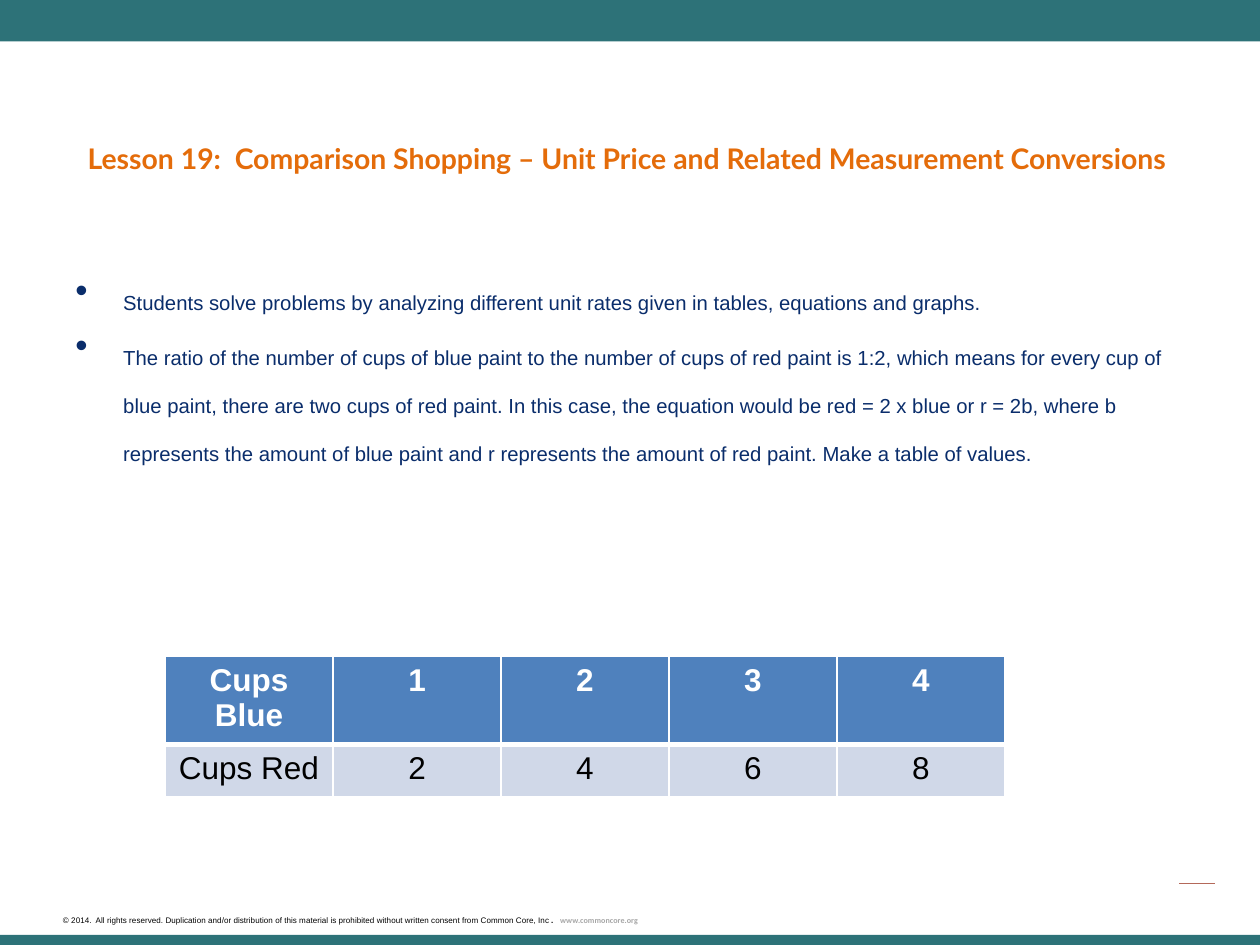
from lxml.etree import SubElement
from pptx import Presentation
from pptx.dml.color import RGBColor
from pptx.enum.shapes import MSO_CONNECTOR, MSO_SHAPE
from pptx.enum.text import MSO_ANCHOR, MSO_AUTO_SIZE, PP_ALIGN
from pptx.oxml.ns import qn
from pptx.util import Inches, Pt

# Content
TITLE = "Lesson 19:  Comparison Shopping – Unit Price and Related Measurement Conversions "
BULLETS = [
    "Students solve problems by analyzing different unit rates given in tables, "
    "equations and graphs.",
    "The ratio of the number of cups of blue paint to the number of cups of red paint "
    "is 1:2, which means for every cup of blue paint, there are two cups of red paint. "
    "In this case, the equation would be red = 2 x blue or r = 2b, where b represents "
    "the amount of blue paint and r represents the amount of red paint. "
    "Make a table of values.",
]
PAINT_TABLE = [
    ("Cups Blue", "1", "2", "3", "4"),
    ("Cups Red", "2", "4", "6", "8"),
]
FOOTER = [  # text, style name
    ("© 2014.  All rights reserved. Duplication and/or distribution of this material is "
     "prohibited without written consent from Common Core, Inc", "footer"),
    (".   ", "footer_dot"),
    ("www.commoncore.org", "footer_link"),
]

# Colours and type: each style is font, size, colour, bold
THEME = {
    "bar": "2D7278", "rule": "B4695A", "border": "FFFFFF",
    "row_fills": ("4F81BD", "D0D8E8"),
    "title": ("Lato", 28, "E46C0A", True),
    "body": ("Arial", 20, "0A2D6B", False),
    "row_0": ("Arial", 18, "FFFFFF", True),
    "row_1": ("Arial", 18, "000000", False),
    "footer": ("Arial", 8, "000000", False),
    "footer_dot": ("Arial", 8, "000000", True),
    "footer_link": ("Calibri", 8, "A6A6A6", True),
}
WIDTH, HEIGHT = 10, 7.5
MARGIN = WIDTH * 0.05
CONTENT_WIDTH = WIDTH - 2 * MARGIN
COLUMN_WIDTH, ROW_HEIGHT = WIDTH / 7.5, 0.41
INDENT = 0.38

presentation = Presentation()
presentation.slide_width, presentation.slide_height = Inches(WIDTH), Inches(HEIGHT)
slide = presentation.slides.add_slide(presentation.slide_layouts[6])


def color(name):
    return RGBColor.from_string(name)


def style_run(run, style, lowered=True):
    name, size, fill, bold = THEME[style]
    run.font.name, run.font.size, run.font.bold = name, Pt(size), bold
    run.font.color.rgb = color(fill)
    if lowered:
        run._r.get_or_add_rPr().set("baseline", "-25000")


def add_bar(top, height):
    bar = slide.shapes.add_shape(
        MSO_SHAPE.RECTANGLE, 0, Inches(top), Inches(WIDTH), Inches(height))
    bar.shadow.inherit = False
    bar.fill.solid()
    bar.fill.fore_color.rgb = color(THEME["bar"])
    bar.line.fill.background()


def add_text_frame(top, width, height):
    box = slide.shapes.add_textbox(
        Inches(MARGIN), Inches(top), Inches(width), Inches(height))
    box.text_frame.word_wrap = True
    return box.text_frame


def add_bullet(paragraph):
    properties = paragraph._p.get_or_add_pPr()
    properties.set("marL", str(Inches(INDENT)))
    properties.set("indent", str(-Inches(INDENT)))
    SubElement(properties, qn("a:buFont"), typeface="Arial")
    SubElement(properties, qn("a:buChar"), char="•")


def add_borders(cell, widths):
    properties = cell._tc.get_or_add_tcPr()
    for side, width in zip("LRTB", widths):
        line = SubElement(properties, qn(f"a:ln{side}"), w=str(Pt(width)))
        SubElement(SubElement(line, qn("a:solidFill")), qn("a:srgbClr"),
                   val=THEME["border"])


# Bars and short rule
add_bar(0, 0.33)
add_bar(7.42, 0.17)
rule = slide.shapes.add_connector(
    MSO_CONNECTOR.STRAIGHT, Inches(9.36), Inches(7.01), Inches(9.64), Inches(7.01))
rule.line.color.rgb = color(THEME["rule"])
rule.line.width = Pt(0.5)
SubElement(rule._element.spPr, qn("a:effectLst"))

# Footer
footer = add_text_frame(7.19, 6.04, 0.13)
footer.margin_left = footer.margin_right = footer.margin_top = footer.margin_bottom = 0
footer.auto_size = MSO_AUTO_SIZE.SHAPE_TO_FIT_TEXT
for text, style in FOOTER:
    run = footer.paragraphs[0].add_run()
    run.text = text
    style_run(run, style)

# Table of values
table = slide.shapes.add_table(
    len(PAINT_TABLE), len(PAINT_TABLE[0]), Inches(1.31), Inches(5.21),
    Inches(COLUMN_WIDTH * len(PAINT_TABLE[0])),
    Inches(ROW_HEIGHT * len(PAINT_TABLE))).table
for row_index, values in enumerate(PAINT_TABLE):
    for column_index, value in enumerate(values):
        cell = table.cell(row_index, column_index)
        add_borders(cell, (1, 1, 1, 3) if row_index == 0 else (1, 1, 3, 1))
        cell.fill.solid()
        cell.fill.fore_color.rgb = color(THEME["row_fills"][row_index])
        cell.text_frame.text = value
        paragraph = cell.text_frame.paragraphs[0]
        paragraph.alignment = PP_ALIGN.CENTER
        style_run(paragraph.runs[0], f"row_{row_index}", lowered=False)

# Bulleted text
body = add_text_frame(2.07, CONTENT_WIDTH, 4.4)
body.text = "\n".join(BULLETS)
for index, paragraph in enumerate(body.paragraphs):
    add_bullet(paragraph)
    paragraph.space_before = Pt(4 if index else 0)
    style_run(paragraph.runs[0], "body")

# Title
title = add_text_frame(0.81, CONTENT_WIDTH, 0.9)
title.vertical_anchor = MSO_ANCHOR.TOP
title.text = TITLE
title.paragraphs[0].alignment = PP_ALIGN.CENTER
style_run(title.paragraphs[0].runs[0], "title")

presentation.save("out.pptx")
